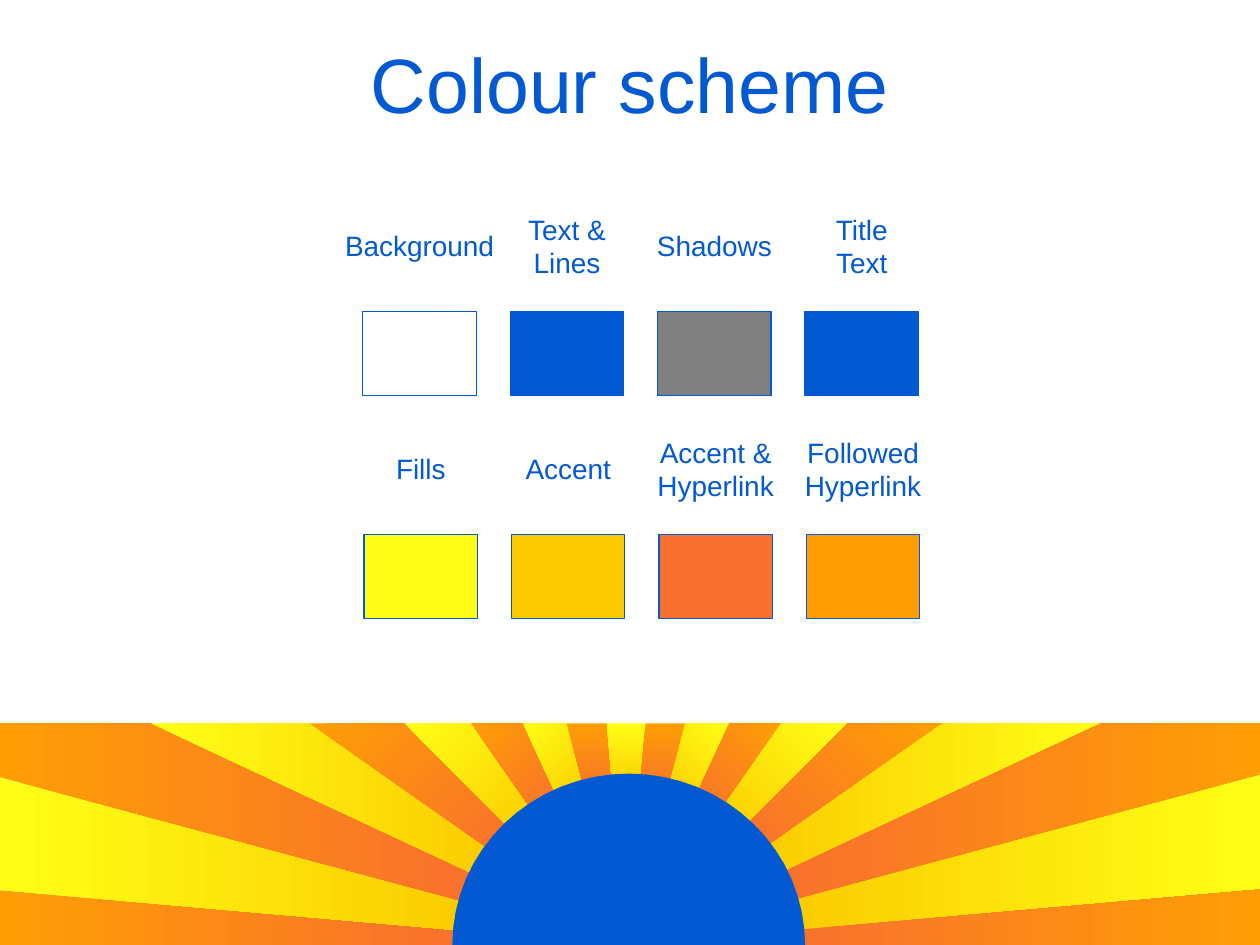
import math

import pptx
import pptx.dml.color
import pptx.enum.shapes
import pptx.enum.text
import pptx.util

Inches = pptx.util.Inches
BLUE, YELLOW, GOLD, ORANGE, CORAL = "0359D1", "FFFE17", "FBCB00", "FF9E05", "F8702E"


def rgb(color):
    return pptx.dml.color.RGBColor.from_string(color)


def add_text(text, left, top, width, height, size):
    """Add a centred, vertically centred blue text box."""
    tf = s.shapes.add_textbox(Inches(left), Inches(top), Inches(width), Inches(height)).text_frame
    tf.text = text
    tf.word_wrap = False
    tf.vertical_anchor = pptx.enum.text.MSO_ANCHOR.MIDDLE
    for p in tf.paragraphs:
        p.alignment = pptx.enum.text.PP_ALIGN.CENTER
        for r in p.runs:
            r.font.name = "Arial"
            r.font.size = pptx.util.Pt(size)
            r.font.color.rgb = rgb(BLUE)


prs = pptx.Presentation()
prs.slide_width, prs.slide_height = Inches(10), Inches(7.5)
s = prs.slides.add_slide(prs.slide_layouts[6])

# Ray edges every 10 degrees, clockwise from the lower left
cx, cy, inner_radius, sky_top = 4.97, 7.5, 1.22, 5.74
angles = [180, *range(175, 0, -10), 0]
outer = []
for angle in angles:
    dx, dy = math.cos(math.radians(angle)), math.sin(math.radians(angle))
    to_side = (cx if dx < 0 else 10 - cx) / abs(dx)
    to_top = (cy - sky_top) / dy if dy > 0 else math.inf
    reach = min(to_side, to_top)
    outer.append((cx + reach * dx, cy - reach * dy))

# Outlines as (points, colors, gradient angle)
outlines = []
gradient_angles = [0] * 4 + [315] * 4 + [270] * 3 + [45] * 4 + [0] * 4
corners = {2: [(0, sky_top)], 16: [(10, sky_top)]}
for i, gradient_angle in enumerate(gradient_angles):
    start, end = angles[i], angles[i + 1]
    points = [outer[i], *corners.get(i, []), outer[i + 1]]
    for step in range(5):
        a = math.radians(end + (start - end) * step / 4)
        points.append((cx + inner_radius * math.cos(a), cy - inner_radius * math.sin(a)))
    colors = (YELLOW, GOLD) if i % 2 else (ORANGE, CORAL)
    if i > 10:  # rays on the right run from the sun outwards
        colors = colors[::-1]
    outlines.append((points, colors, gradient_angle))

sun = []
for step in range(33):
    a = math.pi * (1 - step / 32)
    sun.append((4.99 + 1.4 * math.cos(a), 7.5 - 1.36 * math.sin(a)))
outlines.append((sun, (BLUE,), 0))

for points, colors, gradient_angle in outlines:
    points = [(Inches(x), Inches(y)) for x, y in points]
    fb = s.shapes.build_freeform(*points[0])
    fb.add_line_segments(points[1:], close=True)
    sp = fb.convert_to_shape()
    sp.shadow.inherit = False
    sp.line.fill.background()
    if len(colors) == 1:
        sp.fill.solid()
        sp.fill.fore_color.rgb = rgb(colors[0])
    else:
        sp.fill.gradient()
        sp.fill.gradient_angle = gradient_angle
        for stop, color in zip(sp.fill.gradient_stops, colors):
            stop.color.rgb = rgb(color)

add_text("Colour scheme", 0.5, 0.15, 9, 1.02, 44)

# Labelled swatches
rows = [
    (2.88, 2.47, [("Background", "FFFFFF"), ("Text &\nLines", BLUE),
                  ("Shadows", "808080"), ("Title\vText", BLUE)]),
    (2.89, 4.24, [("Fills", YELLOW), ("Accent", GOLD),
                  ("Accent &\nHyperlink", CORAL), ("Followed\nHyperlink", ORANGE)]),
]
for row_left, top, swatches in rows:
    for i, (label, color) in enumerate(swatches):
        left = row_left + 1.17 * i
        sp = s.shapes.add_shape(pptx.enum.shapes.MSO_SHAPE.RECTANGLE,
                                Inches(left), Inches(top), Inches(0.9), Inches(0.67))
        sp.shadow.inherit = False
        sp.fill.solid()
        sp.fill.fore_color.rgb = rgb(color)
        sp.line.color.rgb = rgb(BLUE)
        sp.line.width = pptx.util.Pt(0.75)
        add_text(label, left - 0.25, top - 0.84, 1.4, 0.64, 16)

prs.save("out.pptx")
